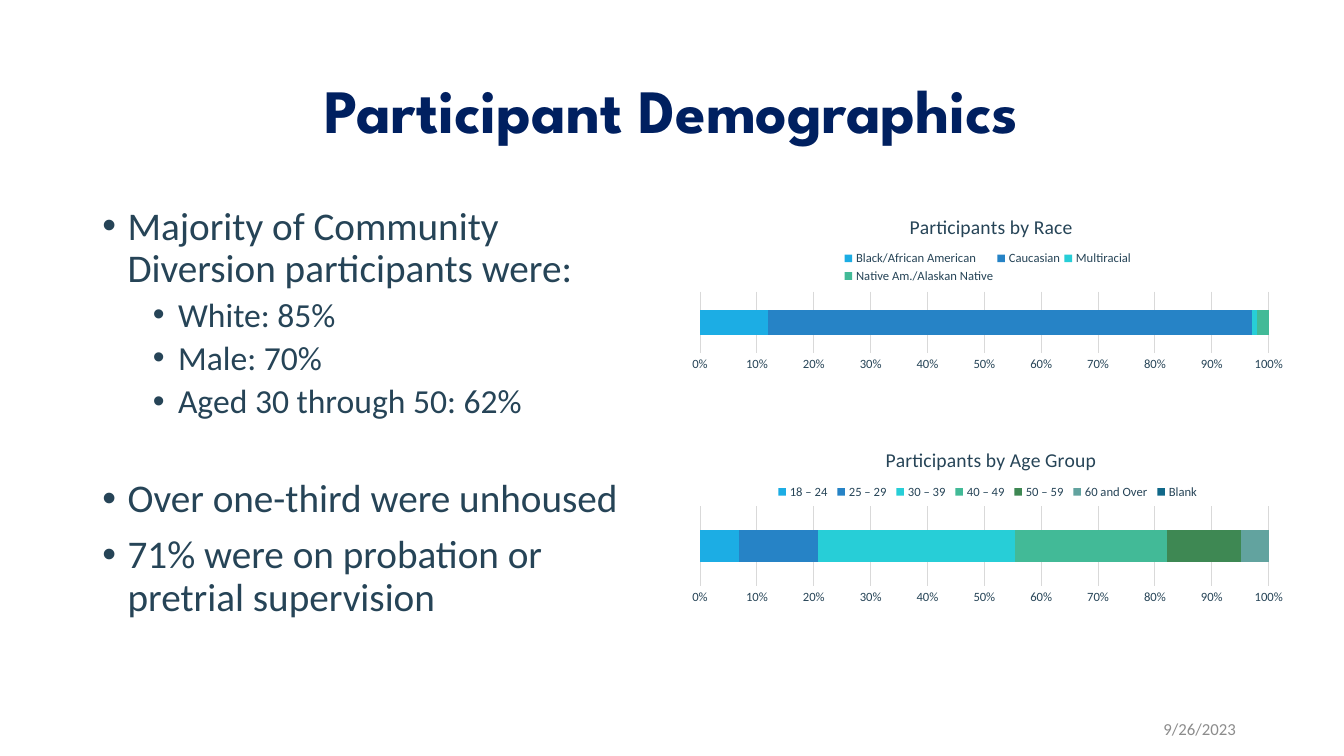
from dataclasses import dataclass
from lxml.etree import SubElement as Sub
from pptx import Presentation
from pptx.chart.data import CategoryChartData as Data
from pptx.dml.color import RGBColor as RGB
from pptx.enum.chart import (XL_CHART_TYPE as Kind, XL_LEGEND_POSITION as Side,
                             XL_TICK_MARK as Tick)
from pptx.enum.text import (MSO_ANCHOR as Anchor, MSO_AUTO_SIZE as Fit,
                            PP_ALIGN as Align)
from pptx.oxml import parse_xml
from pptx.oxml.ns import nsdecls, qn
from pptx.util import Pt


# Colours and type sizes
@dataclass(frozen=True)
class Theme:
    head: str = "League Spartan"
    body: str = "Calibri"
    navy: str = "002060"
    ink: str = "264457"
    grey: str = "8C8C8C"
    grid: str = "D9D9D9"
    fills: tuple = ("1CADE4", "2683C6", "27CED7", "42BA97",
                    "3E8853", "62A39F", "106889")
    title: int = 44
    list: tuple = (28, 24)
    date: int = 12
    chart: int = 14
    label: int = 9


def put(item, **vals):
    for name, val in vals.items():
        setattr(item, name, val)


def place(item, box):
    put(item, **dict(zip(("left", "top", "width", "height"), map(Pt, box))))


def font(item, size, color, face, bold=False):
    put(item, size=Pt(size), name=face, bold=bold)
    item.color.rgb = RGB.from_string(color)


def layout(item, index, inner=False, **vals):
    """Fix a chart part at fractions of the chart area."""
    for old in item.findall(qn("c:layout")):
        item.remove(old)
    root = parse_xml(f"<c:layout {nsdecls('c')}><c:manualLayout/></c:layout>")
    tags = {"layoutTarget": "inner"} if inner else {}
    tags |= {"xMode": "edge", "yMode": "edge"} | vals
    for tag, val in tags.items():
        Sub(root[0], qn("c:" + tag)).set("val", str(val))
    item.insert(index, root)


class Deck:
    def __init__(self, theme, width, height):
        self.theme = theme
        self.prs = Presentation()
        put(self.prs, slide_width=Pt(width), slide_height=Pt(height))
        self.slide = self.prs.slides.add_slide(self.prs.slide_layouts[1])

    def title(self, text, box):
        t, shape = self.theme, self.slide.shapes.title
        place(shape, box)
        frame = shape.text_frame
        put(frame, text=text, word_wrap=True, auto_size=Fit.NONE,
            vertical_anchor=Anchor.MIDDLE)
        para = frame.paragraphs[0]
        put(para, alignment=Align.CENTER, line_spacing=0.9)
        font(para.runs[0].font, t.title, t.navy, t.head, True)

    def bullets(self, items, box):
        t, shape = self.theme, self.slide.placeholders[1]
        place(shape, box)
        frame = shape.text_frame
        put(frame, word_wrap=True, auto_size=Fit.NONE, vertical_anchor=Anchor.TOP)
        for i, (level, gap, text) in enumerate(items):
            para = frame.add_paragraph() if i else frame.paragraphs[0]
            props = para._p.get_or_add_pPr()
            props.set("marL", str(Pt(18 + 36 * level)))
            props.set("indent", str(Pt(-18)))
            Sub(props, qn("a:buFont")).set("typeface", "Arial")
            Sub(props, qn("a:buChar")).set("char", "•")
            put(para, level=level, line_spacing=0.9, space_before=Pt(gap),
                alignment=Align.LEFT)
            run = para.add_run()
            run.text = text
            font(run.font, t.list[level], t.ink, t.body)

    def date(self, text, box):
        t = self.theme
        frame = self.slide.shapes.add_textbox(*map(Pt, box)).text_frame
        put(frame, text=text, word_wrap=True, vertical_anchor=Anchor.MIDDLE)
        para = frame.paragraphs[0]
        para.alignment = Align.RIGHT
        font(para.runs[0].font, t.date, t.grey, t.body)

    def chart(self, text, parts, box, head, key, plot):
        t, data = self.theme, Data()
        data.categories = ["1"]
        for name, val in parts.items():
            data.add_series(name, [val])
        chart = self.slide.shapes.add_chart(
            Kind.BAR_STACKED_100, *map(Pt, box), data).chart
        font(chart.font, t.label, t.ink, t.body)

        # Bars
        bars = chart.plots[0]
        put(bars, gap_width=150, overlap=100, vary_by_categories=False)
        for part, color in zip(bars.series, t.fills):
            part.format.fill.solid()
            part.format.fill.fore_color.rgb = RGB.from_string(color)

        # Axes
        chart.category_axis.visible = False
        axis = chart.value_axis
        put(axis, major_tick_mark=Tick.NONE, minor_tick_mark=Tick.NONE,
            has_major_gridlines=True)
        put(axis.tick_labels, number_format="0%", number_format_is_linked=False)
        font(axis.tick_labels.font, t.label, t.ink, t.body)
        axis.format.line.fill.background()
        line = axis.major_gridlines.format.line
        line.width = Pt(0.75)
        line.color.rgb = RGB.from_string(t.grid)

        # Title and legend
        chart.has_title = chart.has_legend = True
        frame = chart.chart_title.text_frame
        frame.text = text
        font(frame.paragraphs[0].runs[0].font, t.chart, t.ink, t.body)
        put(chart.legend, position=Side.TOP, include_in_layout=False)
        font(chart.legend.font, t.label, t.ink, t.body)
        layout(chart.chart_title._element, 1, **head)
        layout(chart.legend._element, 1, **key)
        area = chart._chartSpace.chart.plotArea
        layout(area, 0, True, x=0.032, w=0.925, **plot)


def main():
    deck = Deck(Theme(), 960, 540)
    deck.title("Participant Demographics", (66, 28.75, 828, 104.4))
    deck.bullets([
        (0, 0, "Majority of Community Diversion participants were:"),
        (1, 5, "White: 85%"),
        (1, 5, "Male: 70%"),
        (1, 5, "Aged 30 through 50: 62%"),
        (0, 41.4, "Over one-third were unhoused"),
        (0, 10, "71% were on probation or pretrial supervision"),
    ], (66, 143.75, 408, 342.6))
    deck.date("9/26/2023", (674, 506, 216, 28.75))

    # Charts
    left, wide, high = 486, 439.2, 129.6
    deck.chart("Participants by Race", {
        "Black/African American": 12, "Caucasian": 85, "Multiracial": 1,
        "Native Am./Alaskan Native": 2,
    }, (left, 139.7, wide, high), dict(x=0.367, y=0.08),
        dict(x=0.26, y=0.29, w=0.48, h=0.21), dict(y=0.53, h=0.34))
    deck.chart("Participants by Age Group", {
        "18 – 24": 7, "25 – 29": 14, "30 – 39": 35, "40 – 49": 27,
        "50 – 59": 13, "60 and Over": 5, "Blank": 0,
    }, (left, 306, wide, high), dict(x=0.328, y=0.08),
        dict(x=0.15, y=0.3, w=0.7, h=0.1), dict(y=0.43, h=0.44))
    deck.prs.save("out.pptx")


if __name__ == "__main__":
    main()
